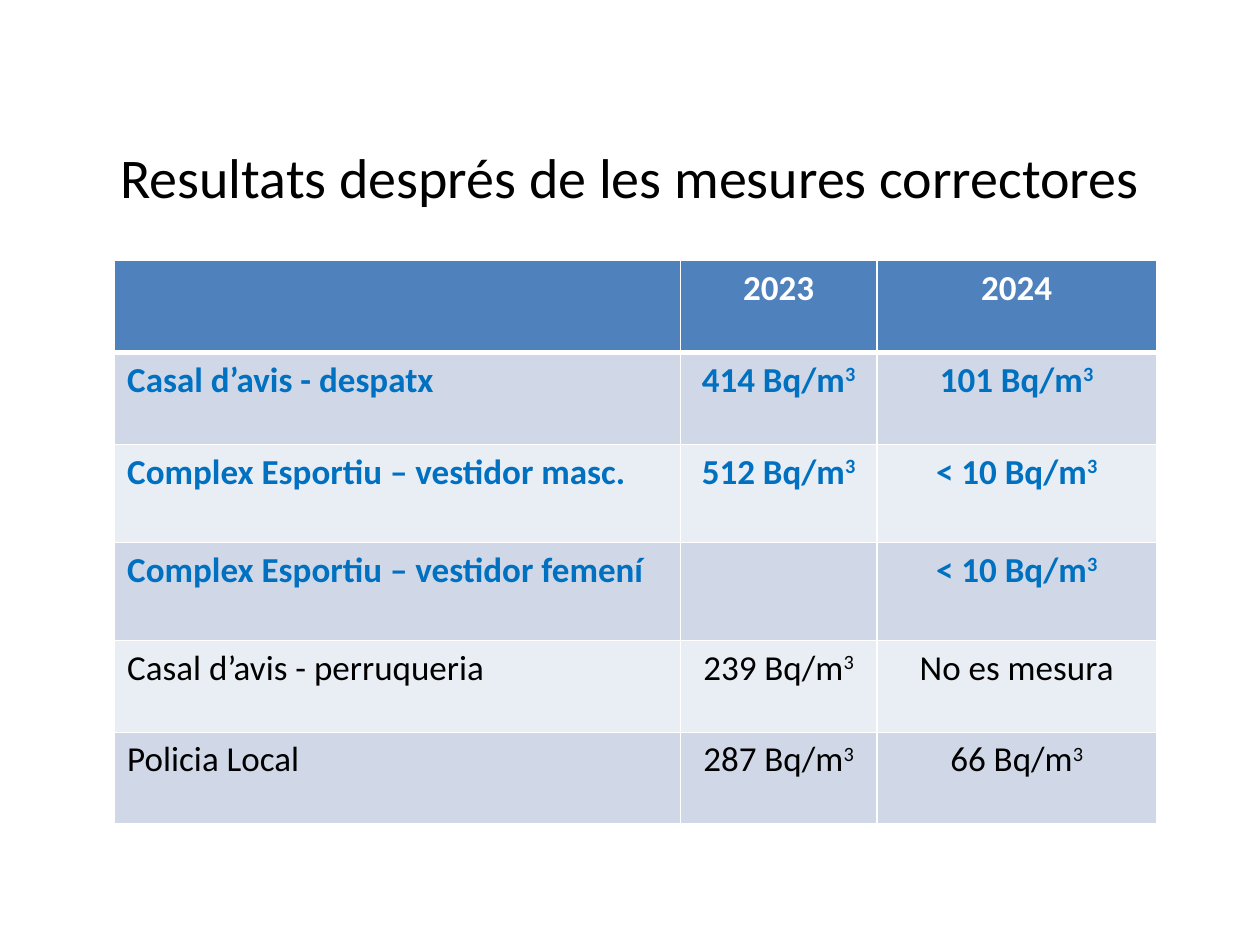
"""Builds the slide with radon results after the corrective measures."""
import pptx
import pptx.dml.color
import pptx.enum.text
import pptx.oxml.ns
import pptx.util
from lxml import etree

Pt = pptx.util.Pt
RGBColor = pptx.dml.color.RGBColor
Align = pptx.enum.text.PP_ALIGN

BLACK = RGBColor(0x00, 0x00, 0x00)
WHITE = RGBColor(0xFF, 0xFF, 0xFF)
HEADER_BLUE = RGBColor(0x4F, 0x81, 0xBD)
BAND_DARK = RGBColor(0xD0, 0xD8, 0xE8)
BAND_LIGHT = RGBColor(0xE9, 0xED, 0xF4)
ACCENT_BLUE = RGBColor(0x00, 0x70, 0xC0)

UNIT = " Bq/m"
RESULTS = [
    ("", "2023", "2024"),
    ("Casal d’avis - despatx", "414 Bq/m", "101 Bq/m"),
    ("Complex Esportiu – vestidor masc.", "512 Bq/m", "< 10 Bq/m"),
    ("Complex Esportiu – vestidor femení", "", "< 10 Bq/m"),
    ("Casal d’avis - perruqueria", "239 Bq/m", "No es mesura"),
    ("Policia Local", "287 Bq/m", "66 Bq/m"),
]
COLUMN_WIDTHS = [323.3, 112.3, 159.8]
ROW_HEIGHTS = [52.5, 52.5, 56, 56, 52.5, 52.5]
CORRECTED_ROWS = range(1, 4)


class SlideBuilder:
    """Holds the typeface and the current slide."""

    def __init__(self, slide, typeface="Calibri"):
        self.slide = slide
        self.typeface = typeface

    def fill_paragraph(self, paragraph, text, size, color, bold, align):
        paragraph.alignment = align
        font = paragraph.font
        font.name, font.size, font.bold = self.typeface, Pt(size), bold
        font.color.rgb = color
        if text:
            paragraph.add_run().text = text
        if text.endswith(UNIT):
            exponent = paragraph.add_run()
            exponent.text = "3"
            exponent.font._element.set("baseline", "30000")

    def title(self, text, left, top, width, height):
        frame = self.slide.shapes.add_textbox(Pt(left), Pt(top), Pt(width), Pt(height)).text_frame
        frame.word_wrap = True
        frame.vertical_anchor = pptx.enum.text.MSO_ANCHOR.MIDDLE
        self.fill_paragraph(frame.paragraphs[0], text, 32, BLACK, False, Align.CENTER)

    def borders(self, cell, widths):
        properties = cell._tc.get_or_add_tcPr()
        namespace = pptx.oxml.ns.nsdecls("a")
        for side, width in widths.items():
            properties.append(etree.fromstring(
                f'<a:ln{side} {namespace} w="{Pt(width)}"><a:solidFill>'
                f'<a:srgbClr val="{WHITE}"/></a:solidFill></a:ln{side}>'))

    def results_table(self, left, top):
        table = self.slide.shapes.add_table(
            len(RESULTS), len(COLUMN_WIDTHS), Pt(left), Pt(top),
            Pt(sum(COLUMN_WIDTHS)), Pt(sum(ROW_HEIGHTS))).table
        for column, width in zip(table.columns, COLUMN_WIDTHS):
            column.width = Pt(width)
        for index, (row, height, texts) in enumerate(zip(table.rows, ROW_HEIGHTS, RESULTS)):
            row.height = Pt(height)
            header = index == 0
            corrected = index in CORRECTED_ROWS
            band = HEADER_BLUE if header else BAND_DARK if index % 2 else BAND_LIGHT
            color = WHITE if header else ACCENT_BLUE if corrected else BLACK
            widths = {"L": 1, "R": 1, "T": 3 if index == 1 else 1, "B": 3 if header else 1}
            for position, (cell, text) in enumerate(zip(row.cells, texts)):
                self.borders(cell, widths)
                cell.fill.solid()
                cell.fill.fore_color.rgb = band
                align = Align.CENTER if position else Align.LEFT
                self.fill_paragraph(cell.text_frame.paragraphs[0], text, 20, color,
                                    header or corrected, align)


def main():
    presentation = pptx.Presentation()
    presentation.slide_width, presentation.slide_height = Pt(720), Pt(540)
    builder = SlideBuilder(presentation.slides.add_slide(presentation.slide_layouts[6]))
    builder.title("Resultats després de les mesures correctores", 36, 55.5, 648, 90)
    builder.results_table(65.5, 149)
    presentation.save("out.pptx")


if __name__ == "__main__":
    main()
